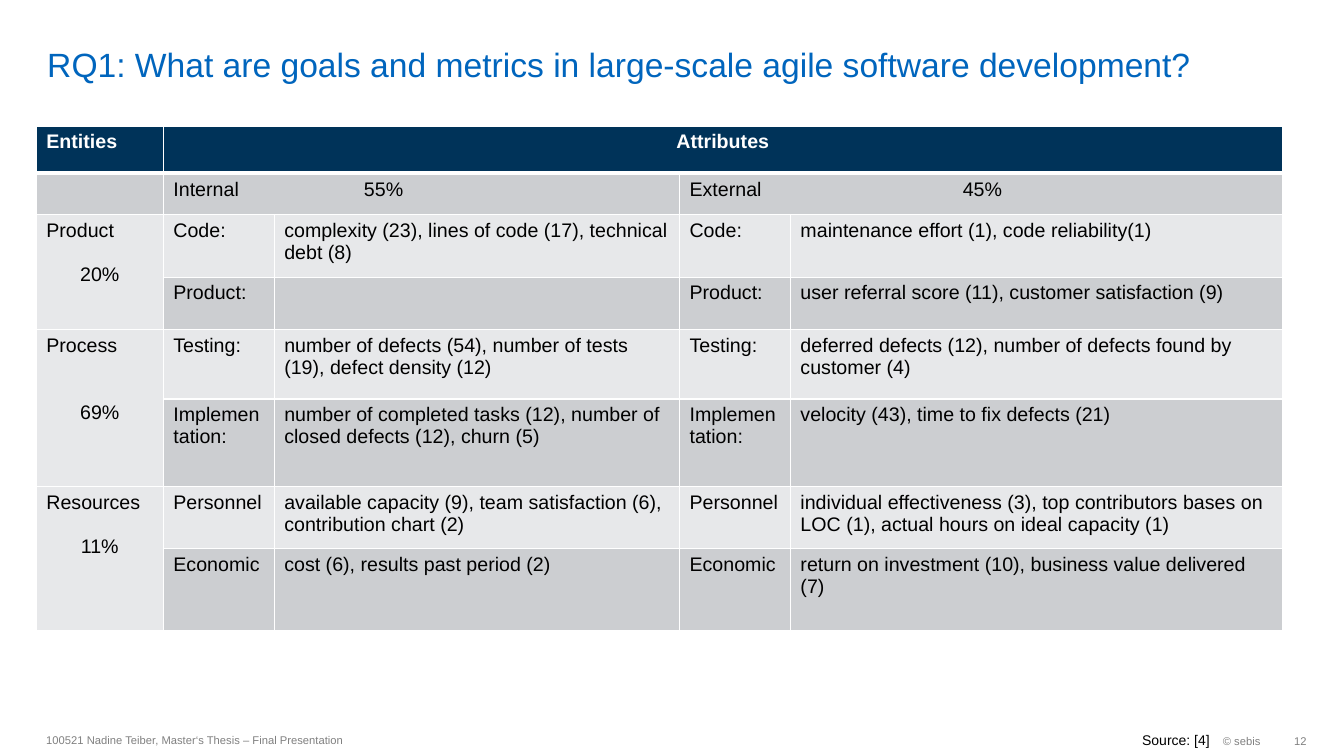
"""Build the RQ1 slide with its table of agile goals and metrics."""
from dataclasses import dataclass

from lxml.etree import SubElement
from pptx import Presentation
from pptx.dml.color import RGBColor
from pptx.enum.text import MSO_ANCHOR as Anchor, PP_ALIGN as Align
from pptx.oxml.ns import qn
from pptx.util import Inches, Pt


@dataclass(frozen=True)
class Theme:
    """Colours and type sizes of the slide."""
    font: str = "Arial"
    title: str = "0065BD"
    header: str = "003359"
    dark_band: str = "CCCED1"
    light_band: str = "E7E8EA"
    white: str = "FFFFFF"
    black: str = "000000"
    grey: str = "808080"
    title_size: int = 24
    table_size: int = 14
    source_size: int = 10
    footer_size: int = 8


THEME = Theme()
COLUMN_WIDTHS = (1.26, 1.1, 4.02, 1.1, 4.88)
ROW_HEIGHTS = (0.47, 0.41, 0.62, 0.52, 0.69, 0.87, 0.61, 0.82)
SHARES = (("Internal", "55%", 1, 1.89), ("External", "45%", 3, 2.71))
ENTITIES = (("Product", "20%", 16), ("Process", "69%", 32), ("Resources", "11%", 16))
ATTRIBUTES = (
    ("Code:", "complexity (23), lines of code (17), technical debt (8)",
     "maintenance effort (1), code reliability(1)"),
    ("Product:", "", "user referral score (11), customer satisfaction (9)"),
    ("Testing:", "number of defects (54), number of tests (19), defect density (12)",
     "deferred defects (12), number of defects found by customer (4)"),
    ("Implementation:",
     "number of completed tasks (12), number of closed defects (12), churn (5)",
     "velocity (43), time to fix defects (21)"),
    ("Personnel", "available capacity (9), team satisfaction (6), contribution chart (2)",
     "individual effectiveness (3), top contributors bases on LOC (1), "
     "actual hours on ideal capacity (1)"),
    ("Economic", "cost (6), results past period (2)",
     "return on investment (10), business value delivered (7)"),
)


def write(paragraph, text, size, color, bold=False, align=Align.LEFT):
    """Put one formatted run into a paragraph."""
    paragraph.alignment = align
    run = paragraph.add_run()
    run.text = text
    formats = {"name": THEME.font, "size": Pt(size), "bold": bold}
    for name, value in formats.items():
        setattr(run.font, name, value)
    run.font.color.rgb = RGBColor.from_string(color)


def add_label(slide, box, text, size, color, align=Align.LEFT, **frame_formats):
    """Add a one-line text box."""
    frame = slide.shapes.add_textbox(*map(Inches, box)).text_frame
    for name, value in {"word_wrap": True, **frame_formats}.items():
        setattr(frame, name, value)
    write(frame.paragraphs[0], text, size, color, align=align)


def add_tab_stop(paragraph, position):
    """Add a left tab stop to a paragraph."""
    tabs = SubElement(paragraph._p.get_or_add_pPr(), qn("a:tabLst"))
    SubElement(tabs, qn("a:tab"), pos=str(Inches(position)), algn="l")


def style_cell(cell, row, fill):
    """Give a cell its white borders and its fill."""
    thick_side = {0: "lnB", 1: "lnT"}.get(row)
    properties = cell._tc.get_or_add_tcPr()
    for side in ("lnL", "lnR", "lnT", "lnB"):
        width = Pt(3 if side == thick_side else 1)
        line = SubElement(properties, qn(f"a:{side}"), w=str(width))
        solid = SubElement(line, qn("a:solidFill"))
        SubElement(solid, qn("a:srgbClr"), val=THEME.white)
    cell.fill.solid()
    cell.fill.fore_color.rgb = RGBColor.from_string(fill)


def row_fill(row, column):
    """Return the band colour of a cell."""
    if row == 0:
        return THEME.header
    if row % 2 == 0 or (column == 0 and row > 1):
        return THEME.light_band
    return THEME.dark_band


def write_cell(cell, text, color=THEME.black, **formats):
    """Write the first paragraph of a table cell."""
    write(cell.text_frame.paragraphs[0], text, THEME.table_size, color, **formats)


def add_metrics_table(slide):
    """Add the table of entities and their attributes."""
    table = slide.shapes.add_table(
        len(ROW_HEIGHTS), len(COLUMN_WIDTHS), Inches(0.36), Inches(1.25),
        Inches(sum(COLUMN_WIDTHS)), Inches(sum(ROW_HEIGHTS))).table
    for column, width in zip(table.columns, COLUMN_WIDTHS):
        column.width = Inches(width)
    for index, height in enumerate(ROW_HEIGHTS):
        table.rows[index].height = Inches(height)
        for column in range(len(COLUMN_WIDTHS)):
            style_cell(table.cell(index, column), index, row_fill(index, column))

    table.cell(0, 1).merge(table.cell(0, 4))
    write_cell(table.cell(0, 0), "Entities", THEME.white, bold=True)
    write_cell(table.cell(0, 1), "Attributes", THEME.white, bold=True, align=Align.CENTER)

    for name, share, column, position in SHARES:
        cell = table.cell(1, column)
        cell.merge(table.cell(1, column + 1))
        add_tab_stop(cell.text_frame.paragraphs[0], position)
        write_cell(cell, f"{name}\t{share}")

    for index, (name, share, gap) in enumerate(ENTITIES):
        row = 2 + 2 * index
        cell = table.cell(row, 0)
        cell.merge(table.cell(row + 1, 0))
        write_cell(cell, name)
        paragraph = cell.text_frame.add_paragraph()
        paragraph.space_before = Pt(gap)
        write(paragraph, share, THEME.table_size, THEME.black, align=Align.CENTER)

    for row, (group, internal, external) in enumerate(ATTRIBUTES, start=2):
        for column, text in enumerate((group, internal, group, external), start=1):
            if text:
                write_cell(table.cell(row, column), text)


def main():
    """Build and save the slide."""
    presentation = Presentation()
    presentation.slide_width = Inches(13.33)
    presentation.slide_height = Inches(7.5)
    slide = presentation.slides.add_slide(presentation.slide_layouts[6])

    add_label(slide, (0.37, 0.05, 11.58, 0.79),
              "RQ1: What are goals and metrics in large-scale agile software development?",
              THEME.title_size, THEME.title, vertical_anchor=Anchor.BOTTOM,
              margin_top=0, margin_bottom=0)
    add_metrics_table(slide)
    footer = {"size": THEME.footer_size, "color": THEME.grey,
              "vertical_anchor": Anchor.MIDDLE}
    add_label(slide, (0.36, 7.18, 6.3, 0.32),
              "100521 Nadine Teiber, Master‘s Thesis – Final Presentation", **footer)
    add_label(slide, (10.26, 7.19, 2.34, 0.32), "© sebis", align=Align.RIGHT, **footer)
    add_label(slide, (12.6, 7.19, 0.36, 0.32), "12", align=Align.RIGHT,
              margin_right=0, **footer)
    add_label(slide, (11.23, 7.21, 1.28, 0.27), "Source: [4]",
              THEME.source_size, THEME.black)
    presentation.save("out.pptx")


if __name__ == "__main__":
    main()
